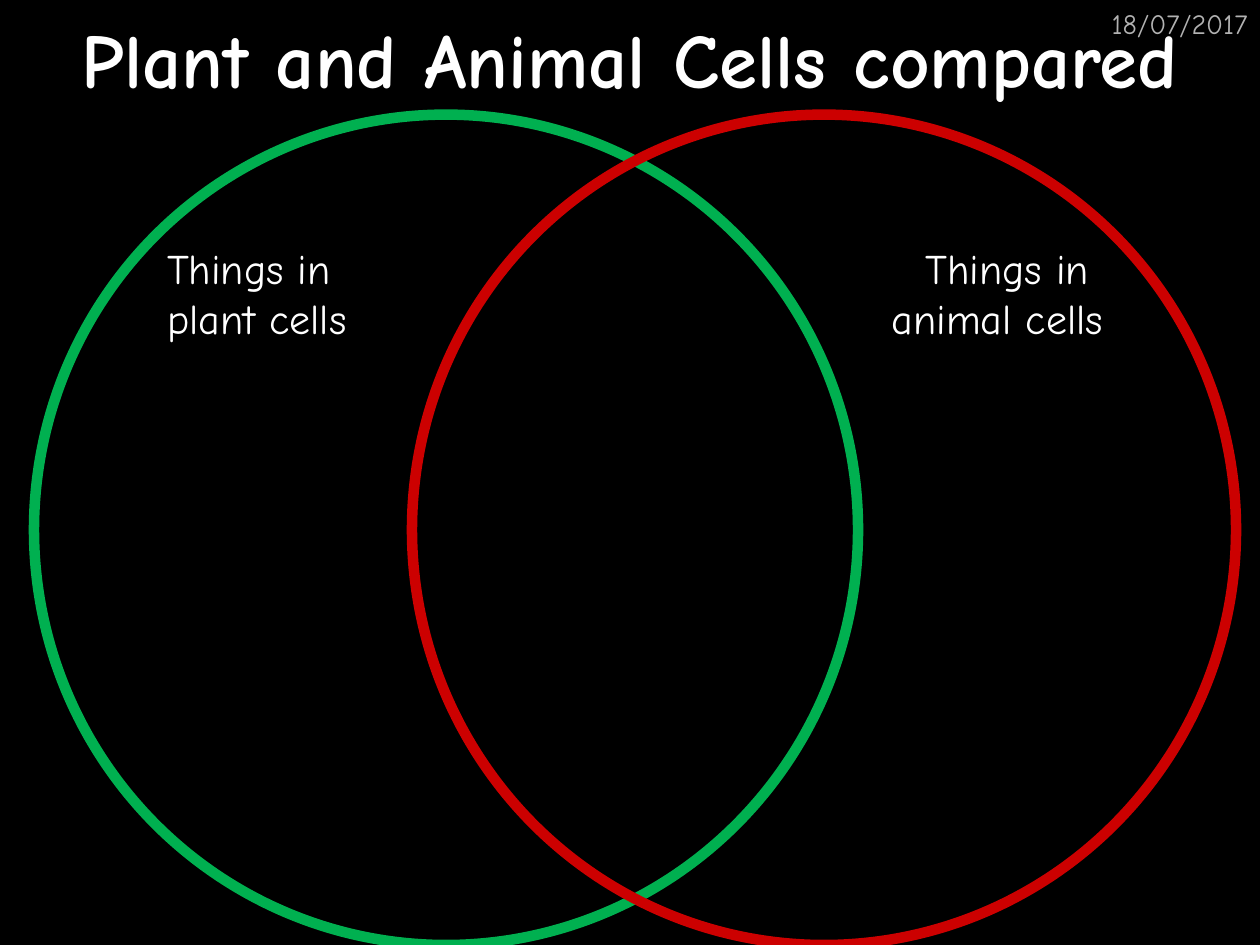
from dataclasses import dataclass

from pptx import Presentation
from pptx.dml.color import RGBColor as Color
from pptx.enum.shapes import MSO_SHAPE as Shape
from pptx.enum.text import MSO_ANCHOR as Anchor, PP_ALIGN as Align
from pptx.util import Inches, Pt


@dataclass(frozen=True)
class Theme:
    """Colours, font and type sizes of the slide."""
    font: str = "Comic Neue"
    black: Color = Color(0x00, 0x00, 0x00)
    white: Color = Color(0xFF, 0xFF, 0xFF)
    grey: Color = Color(0xB2, 0xB2, 0xB2)
    green: Color = Color(0x00, 0xB0, 0x50)
    red: Color = Color(0xCC, 0x00, 0x00)
    title_size: int = 44
    label_size: int = 24
    date_size: int = 16
    ring_width: int = 6


class VennSlide:
    """Draws the elements of a Venn diagram on one slide."""

    def __init__(self, page, theme):
        self.page = page
        self.theme = theme
        fill = page.background.fill
        fill.solid()
        fill.fore_color.rgb = theme.black

    def set_text(self, shape, text, size, color, align, anchor=Anchor.TOP, bold=False):
        """Put styled text into a shape."""
        frame = shape.text_frame
        frame.word_wrap = True
        frame.vertical_anchor = anchor
        frame.text = text
        for para in frame.paragraphs:
            para.alignment = align
            for span in para.runs:
                span.font.name = self.theme.font
                span.font.size = Pt(size)
                span.font.bold = bold
                span.font.color.rgb = color

    def text(self, left, top, width, height, text, size, color, align, **style):
        """Add a text box."""
        area = [Inches(length) for length in (left, top, width, height)]
        box = self.page.shapes.add_textbox(*area)
        self.set_text(box, text, size, color, align, **style)

    def ring(self, left, color, label, align, filled=False):
        """Add one set of the diagram with its label."""
        ring = self.page.shapes.add_shape(
            Shape.OVAL, Inches(left), Inches(0.91), Inches(6.54), Inches(6.59))
        ring.shadow.inherit = False
        if filled:
            ring.fill.solid()
            ring.fill.fore_color.rgb = self.theme.black
        else:
            ring.fill.background()
        ring.line.color.rgb = color
        ring.line.width = Pt(self.theme.ring_width)
        self.set_text(ring, label, self.theme.label_size, self.theme.white, align)


def main():
    """Build and save the deck."""
    theme = Theme()
    deck = Presentation()
    deck.slide_width, deck.slide_height = Inches(10), Inches(7.5)
    venn = VennSlide(deck.slides.add_slide(deck.slide_layouts[6]), theme)
    venn.text(0, 0, 10, 0.92, "Plant and Animal Cells compared", theme.title_size,
              theme.white, Align.CENTER, anchor=Anchor.MIDDLE, bold=True)
    venn.text(8.44, 0, 1.56, 0.33, "18/07/2017", theme.date_size, theme.grey, Align.RIGHT)
    venn.ring(0.27, theme.green, "Things in\nplant cells", Align.LEFT, filled=True)
    venn.ring(3.27, theme.red, "Things in \nanimal cells", Align.RIGHT)
    deck.save("out.pptx")


if __name__ == "__main__":
    main()
